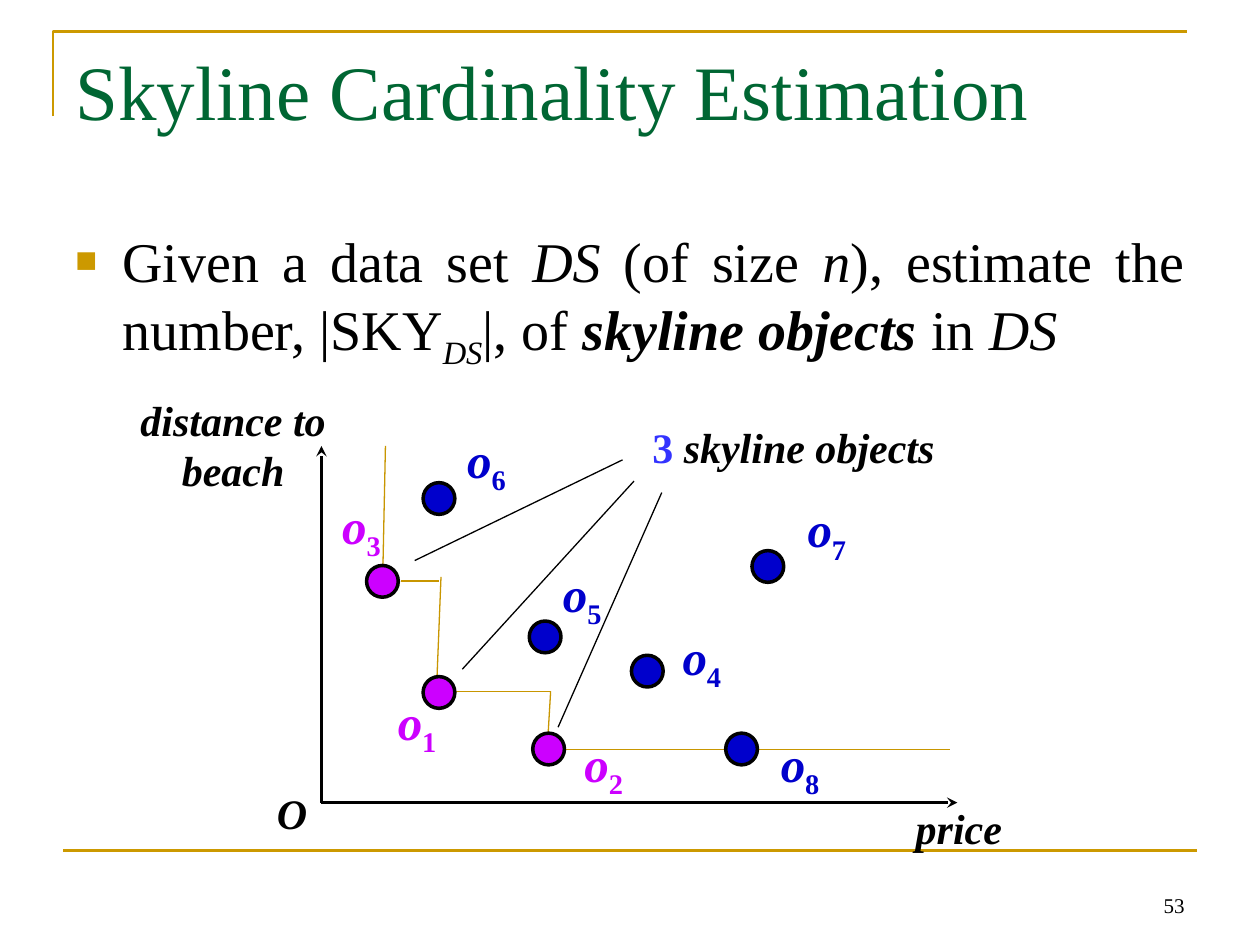
from pptx import Presentation
from pptx.util import Cm, Pt
from pptx.dml.color import RGBColor
from pptx.enum.shapes import MSO_SHAPE as SHAPE, MSO_CONNECTOR as CONN
from pptx.enum.text import PP_ALIGN as AL, MSO_ANCHOR as ANC
from pptx.oxml.ns import qn
from lxml.etree import SubElement

GOLD, STEP, BLACK, GREEN = "CC9900", "C89600", "000000", "006633"
MAGENTA, BLUE = "CC00FF", "0000CC"
rgb = RGBColor.from_string

prs = Presentation()
prs.slide_width, prs.slide_height = Cm(25.4), Cm(19.05)
s = prs.slides.add_slide(prs.slide_layouts[6])


def add_text(x, y, w, h, runs, size, color=BLACK, wrap=True, align=AL.LEFT, anchor=ANC.TOP):
    """Add a text box; each run is (text, format values). Return its paragraph."""
    tf = s.shapes.add_textbox(Cm(x), Cm(y), Cm(w), Cm(h)).text_frame
    tf.word_wrap, tf.vertical_anchor = wrap, anchor
    p = tf.paragraphs[0]
    p.alignment = align
    for text, fmt in runs:
        r = p.add_run()
        r.text = text
        fmt = {"name": "Times New Roman", "size": Pt(size), "color": color, **fmt}
        r.font.color.rgb = rgb(fmt.pop("color"))
        if fmt.pop("sub", False):
            r.font._element.set("baseline", "-25000")
        for key, value in fmt.items():
            setattr(r.font, key, value)
    return p


def add_line(x1, y1, x2, y2, color, width, arrow=False):
    c = s.shapes.add_connector(CONN.STRAIGHT, Cm(x1), Cm(y1), Cm(x2), Cm(y2))
    c.line.color.rgb, c.line.width = rgb(color), Pt(width)
    if arrow:
        SubElement(c.line._get_or_add_ln(), qn("a:tailEnd"), type="stealth")
    SubElement(c._element.spPr, qn("a:effectLst"))


# Frame lines
fb = s.shapes.build_freeform(Cm(1.07), Cm(2.34))
fb.add_line_segments([(Cm(1.07), Cm(0.64)), (Cm(23.93), Cm(0.64))], close=False)
sp = fb.convert_to_shape()
sp.shadow.inherit = False
sp.fill.background()
sp.line.color.rgb, sp.line.width = rgb(GOLD), Pt(1.5)
add_line(1.27, 17.15, 24.13, 17.15, GOLD, 1.5)

# Page number and title
add_text(18.21, 17.35, 5.92, 1.27, [("53", {})], 12, align=AL.RIGHT, anchor=ANC.BOTTOM)
add_text(1.27, 0.76, 22.86, 3.18, [("Skyline Cardinality Estimation", {})], 44, GREEN)

# Bulleted statement
italic = {"italic": True}
bold_italic = {"bold": True, "italic": True}
p = add_text(1.27, 4.45, 22.86, 12.57, [
    ("Given a data set ", {}), ("DS ", italic), ("(of size ", {}), ("n", italic),
    ("), estimate the number, |SKY", {}), ("DS", {"italic": True, "sub": True}),
    ("|, of ", {}), ("skyline objects", bold_italic), (" in ", {}), ("DS", italic),
], 32, align=AL.JUSTIFY)
p.space_before = Pt(6.4)
pPr = p._p.get_or_add_pPr()
pPr.set("marL", str(Cm(0.95)))
pPr.set("indent", str(Cm(-0.95)))
SubElement(SubElement(pPr, qn("a:buClr")), qn("a:srgbClr"), val=GOLD)
SubElement(pPr, qn("a:buSzPct"), val="65000")
SubElement(pPr, qn("a:buFont"), typeface="Times New Roman")
SubElement(pPr, qn("a:buChar"), char="■")

# Axes and their labels
add_line(6.48, 16.18, 19.3, 16.18, BLACK, 2, arrow=True)
add_line(6.48, 16.18, 6.48, 8.99, BLACK, 2, arrow=True)
add_text(18.21, 16.05, 2.26, 1.27, [("price", bold_italic)], 24, wrap=False)
add_text(5.33, 15.75, 1.14, 1.27, [("O", bold_italic)], 24, wrap=False)
add_text(2.26, 7.82, 4.88, 2.31, [("distance to beach", bold_italic)], 24, align=AL.CENTER)

# Skyline steps
for ends in [
    (7.72, 11.4, 7.77, 8.99), (8.08, 11.71, 8.84, 11.71),
    (8.81, 13.64, 8.89, 11.63), (9.17, 13.94, 11.1, 13.94),
    (11.05, 14.78, 11.1, 13.94), (11.3, 15.11, 19.15, 15.11),
]:
    add_line(*ends, STEP, 0.75)

# Objects: number, dot position, label position, colour
DOT = 0.64
for num, x, y, lx, ly, color in [
    (1, 8.53, 13.64, 7.77, 13.82, MAGENTA),
    (2, 10.74, 14.78, 11.53, 14.66, MAGENTA),
    (3, 7.39, 11.4, 6.65, 9.86, MAGENTA),
    (4, 12.73, 13.21, 13.51, 12.5, BLUE),
    (5, 10.67, 12.52, 11.1, 11.23, BLUE),
    (6, 8.53, 9.73, 9.17, 8.53, BLUE),
    (7, 15.16, 11.1, 16.03, 9.93, BLUE),
    (8, 14.63, 14.78, 15.49, 14.66, BLUE),
]:
    sp = s.shapes.add_shape(SHAPE.OVAL, Cm(x), Cm(y), Cm(DOT), Cm(DOT))
    sp.shadow.inherit = False
    sp.fill.solid()
    sp.fill.fore_color.rgb = rgb(color)
    sp.line.color.rgb, sp.line.width = rgb(BLACK), Pt(2)
    add_text(lx, ly, 1.35, 1.45, [("o", bold_italic), (str(num), {"bold": True, "sub": True})],
             28, color, wrap=False)

# Callout to the skyline objects
for ends in [(8.36, 11.3, 12.55, 9.27), (9.32, 13.49, 12.78, 9.7), (11.25, 14.66, 13.34, 9.93)]:
    add_line(*ends, BLACK, 0.75)
add_text(12.9, 8.38, 6.25, 1.27,
         [("3 ", {"bold": True, "color": "3333FF"}), ("skyline objects", bold_italic)], 24, wrap=False)

prs.save("out.pptx")
